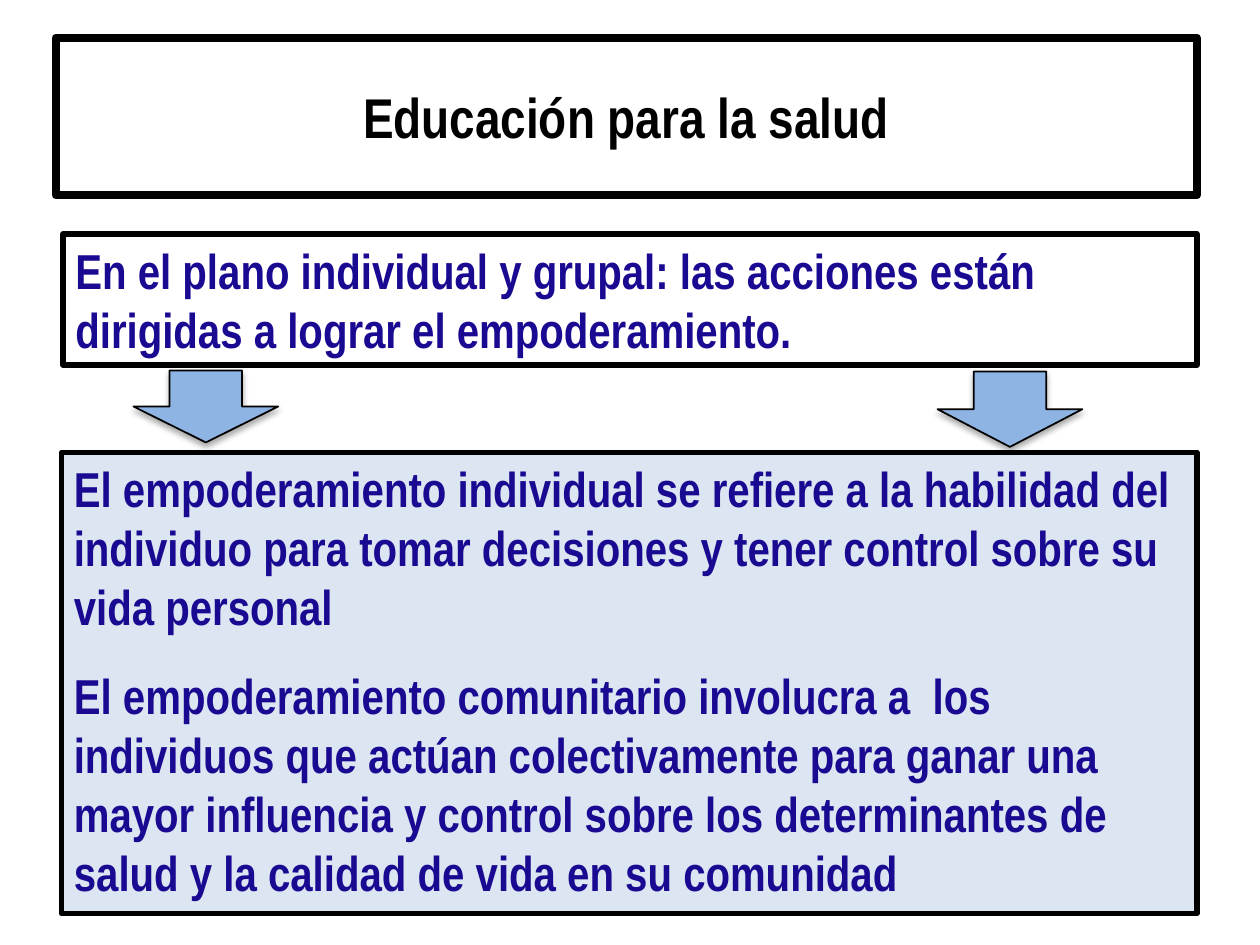
"""Build a slide on health education and empowerment."""
import pptx
import pptx.dml.color
import pptx.enum.shapes
import pptx.enum.text
import pptx.oxml
import pptx.util
from pptx.util import Cm, Pt

SHAPE = pptx.enum.shapes.MSO_SHAPE
ANCHOR = pptx.enum.text.MSO_ANCHOR
ALIGN = pptx.enum.text.PP_ALIGN
FIT = pptx.enum.text.MSO_AUTO_SIZE

FONT = "Arial Narrow"
BLACK, NAVY, PALE, BLUE = "000000", "1A0A92", "DCE6F2", "8EB4E3"
RIGHT = 24.13

TITLE = "Educación para la salud"
TITLE_BOX = (1.12, 0.76, RIGHT - 1.12, 3.18)
PANELS = [
    ((1.27, 4.72, RIGHT - 1.27, 2.64), None, [
        "En el plano individual y grupal: las acciones están dirigidas a lograr el empoderamiento.",
    ]),
    ((1.24, 9.12, RIGHT - 1.24, 9.3), PALE, [
        "El empoderamiento individual se refiere a la habilidad del individuo para tomar "
        "decisiones y tener control sobre su vida personal",
        "El empoderamiento comunitario involucra a  los individuos que actúan colectivamente "
        "para ganar una mayor influencia y control sobre los determinantes de salud y la "
        "calidad de vida en su comunidad",
    ]),
]
ARROWS = [(2.69, 7.47, 2.92, 1.45), (18.9, 7.49, 2.92, 1.52)]
SHADOW = (
    '<a:effectLst xmlns:a="http://schemas.openxmlformats.org/drawingml/2006/main">'
    f'<a:outerShdw blurRad="{Pt(3.5)}" dist="{Pt(2.2)}" dir="5400000" rotWithShape="0">'
    f'<a:srgbClr val="{BLACK}"><a:alpha val="32000"/></a:srgbClr>'
    '</a:outerShdw></a:effectLst>'
)


def rgb(value):
    return pptx.dml.color.RGBColor.from_string(value)


def style_shape(sp, fill, width):
    if fill:
        sp.fill.solid()
        sp.fill.fore_color.rgb = rgb(fill)
    else:
        sp.fill.background()
    sp.line.color.rgb = rgb(BLACK)
    sp.line.width = Pt(width)


def style_text(p, size, color, align):
    p.alignment = align
    for r in p.runs:
        r.font.name = FONT
        r.font.size = Pt(size)
        r.font.bold = True
        r.font.color.rgb = rgb(color)


def add_title(s):
    sp = s.shapes.title
    sp.left, sp.top, sp.width, sp.height = map(Cm, TITLE_BOX)
    style_shape(sp, None, 4.5)
    pptx.oxml.ns  # noqa
    tf = sp.text_frame
    tf.text = TITLE
    tf.auto_size = FIT.NONE
    tf.vertical_anchor = ANCHOR.MIDDLE
    p = tf.paragraphs[0]
    p.space_after = Pt(12)
    style_text(p, 32, BLACK, ALIGN.CENTER)


def add_panel(s, box, fill, lines):
    sp = s.shapes.add_shape(SHAPE.RECTANGLE, *map(Cm, box))
    sp.shadow.inherit = False
    style_shape(sp, fill, 3)
    tf = sp.text_frame
    tf.word_wrap = True
    tf.auto_size = FIT.SHAPE_TO_FIT_TEXT
    tf.vertical_anchor = ANCHOR.TOP
    for i, line in enumerate(lines):
        p = tf.add_paragraph() if i else tf.paragraphs[0]
        p.text = line
        if i:
            p.space_before = Pt(5.6)
        if len(lines) > 1:
            p.space_after = Pt(12)
        style_text(p, 28, NAVY, ALIGN.LEFT)


def add_arrow(s, box):
    sp = s.shapes.add_shape(SHAPE.DOWN_ARROW, *map(Cm, box))
    style_shape(sp, BLUE, 1)
    sp.element.spPr.append(pptx.oxml.parse_xml(SHADOW))


def main():
    prs = pptx.Presentation()
    prs.slide_width, prs.slide_height = Cm(25.4), Cm(19.05)
    s = prs.slides.add_slide(prs.slide_layouts[5])
    add_title(s)
    for panel in PANELS:
        add_panel(s, *panel)
    for box in ARROWS:
        add_arrow(s, box)
    prs.save("out.pptx")


if __name__ == "__main__":
    main()
